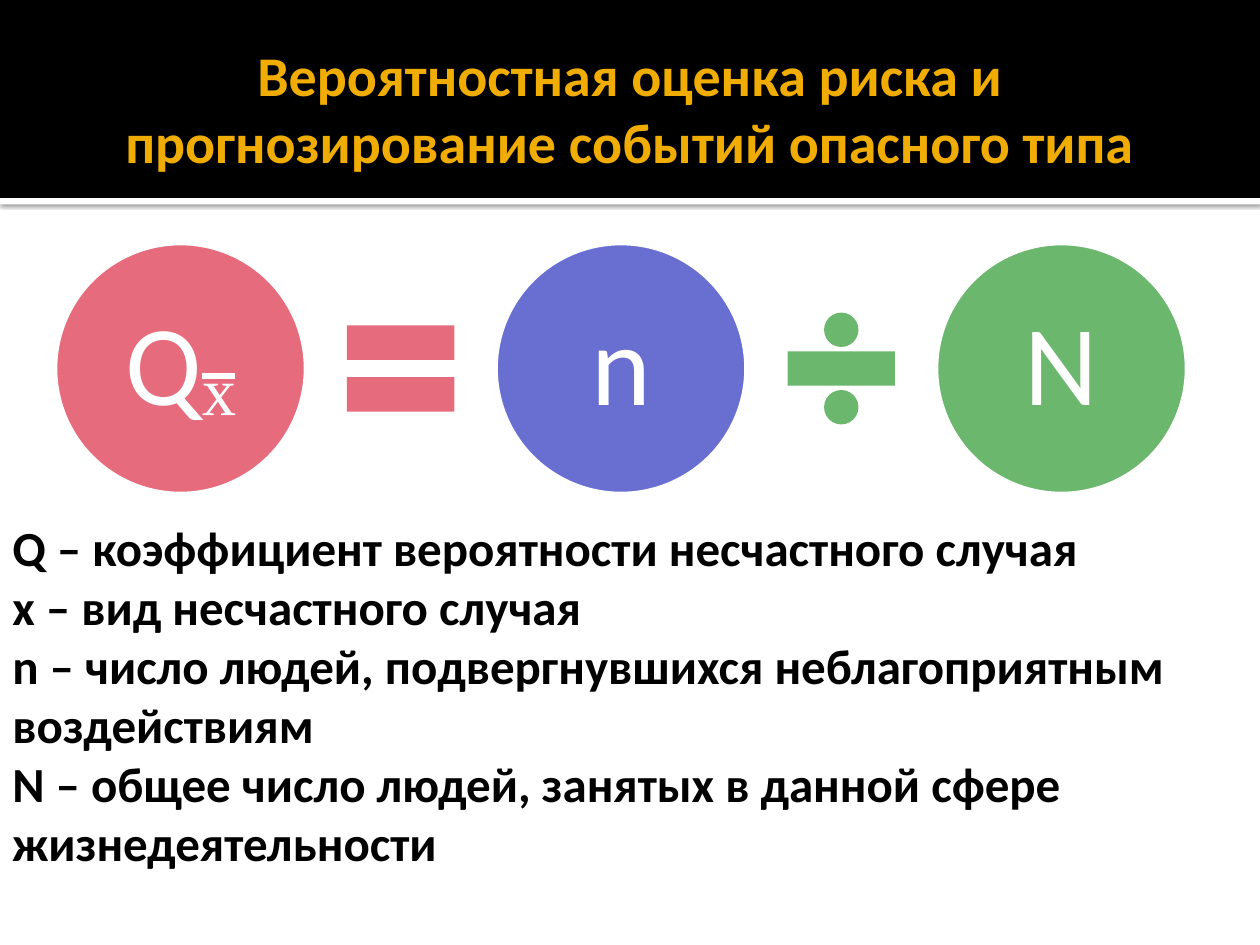
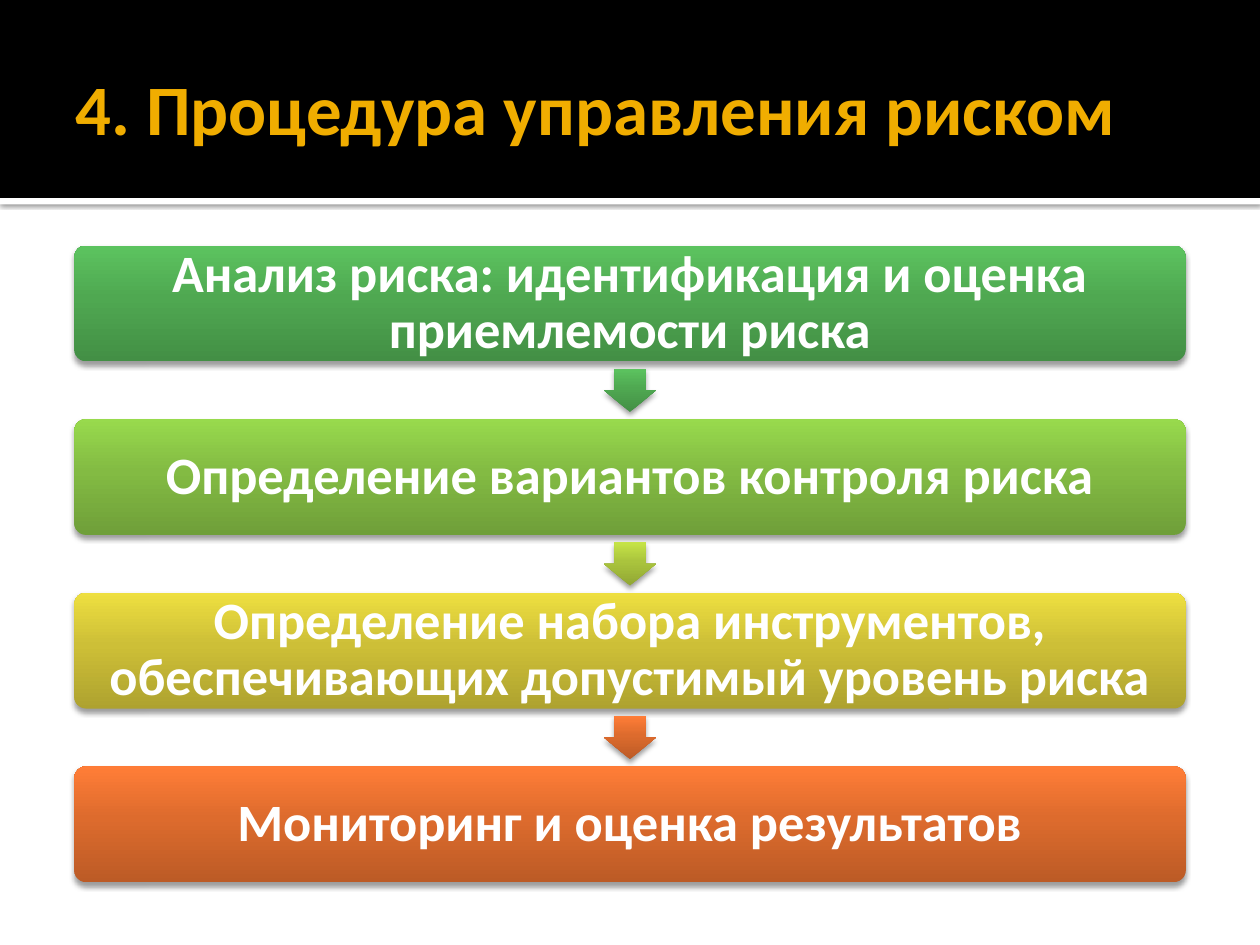
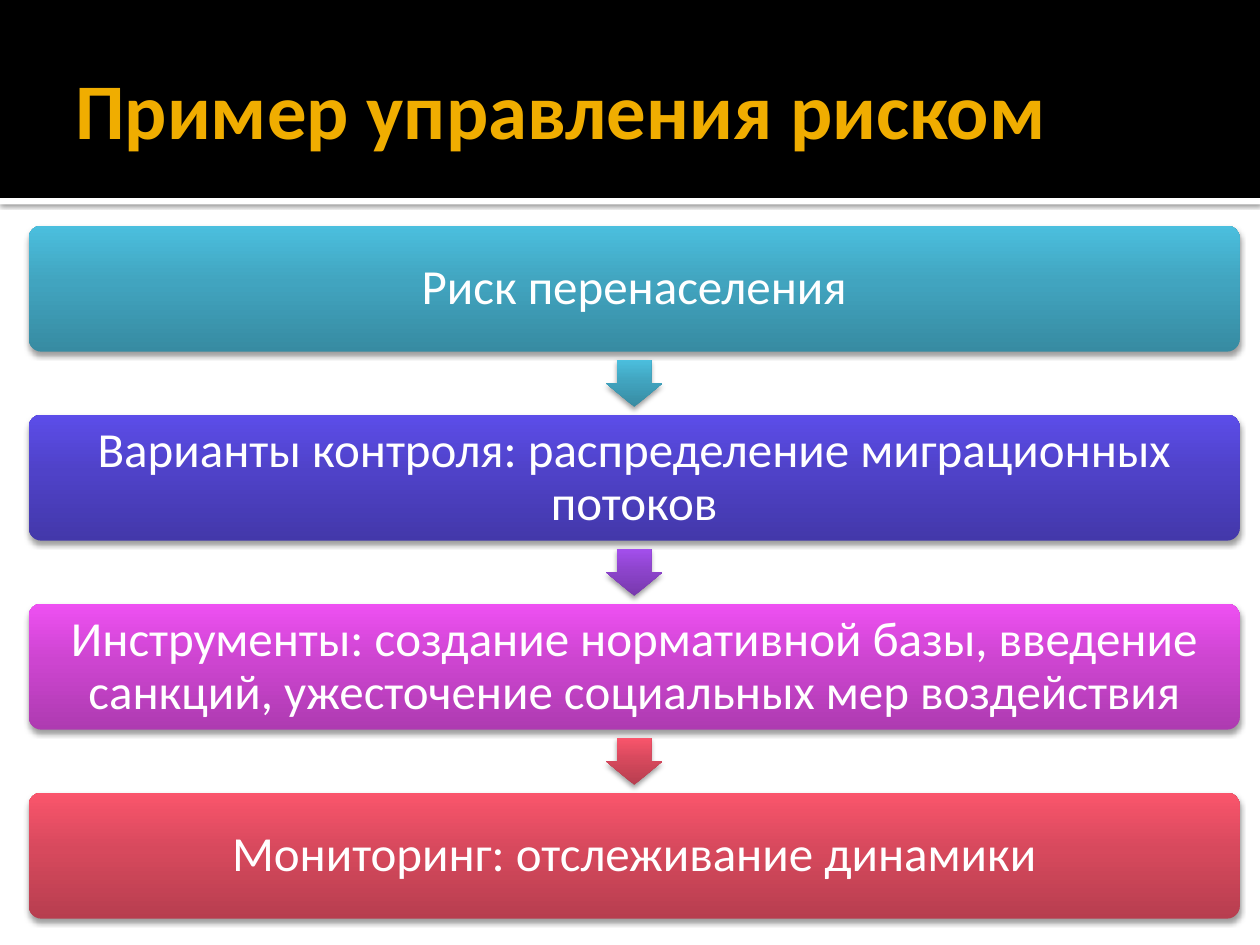
from dataclasses import dataclass

from lxml import etree
from pptx import Presentation
from pptx import util as u
from pptx.dml.color import RGBColor
from pptx.enum import shapes, text
from pptx.oxml.ns import qn
from pptx.shapes.autoshape import Shape
from pptx.slide import Slide
from pptx.text.text import TextFrame, _Run

WIDTH, HEIGHT = 25.4, 19.05
FONT = "Calibri"
BLACK, WHITE, GOLD = "000000", "FFFFFF", "F0AD00"
ROSE, INDIGO, LEAF = "E66C7D", "696FD1", "6BB76D"

# Gradients run from the bottom edge to the top edge.
Shades = tuple[str, str, str]
STOPS = (0, 55, 100)
GREEN = ("438F45", "4FA851", "5CC35F")
GRASS = ("6F9F39", "83BB43", "98DA4D")
LIME = ("91A734", "AAC43D", "C6E447")
YELLOW = ("AEA22F", "CDBF37", "EEDF40")
ORANGE = ("BC5B26", "DD6B2D", "FF7D37")
TEAL = ("378BA2", "41A4BF", "4BBFDE")
BLUE = ("4338AA", "4F42C8", "5C4DE9")
VIOLET = ("7839AD", "8D44CC", "A44FED")
MAGENTA = ("AE3BB1", "CD45D0", "EE50F2")
RED = ("B73E4F", "D7495D", "FA556C")


@dataclass(frozen=True)
class Shadow:
    alpha: int
    blur: float
    distance: float


STRIP_SHADOW = Shadow(60, 2.5, 0.8)
STEP_SHADOW = Shadow(38, 3.1, 2)


@dataclass(frozen=True)
class Step:
    label: str
    shades: Shades
    arrow_shades: Shades | None = None


@dataclass(frozen=True)
class Process:
    """A column of steps; pitch is the distance between step tops, in cm."""
    left: float
    top: float
    width: float
    pitch: float
    size: float
    bold: bool
    steps: tuple[Step, ...]


@dataclass(frozen=True)
class Term:
    symbol: str
    color: str


DEFINITIONS = (
    "Q – коэффициент вероятности несчастного случая",
    "x – вид несчастного случая",
    "n – число людей, подвергнувшихся неблагоприятным воздействиям",
    "N – общее число людей, занятых в данной сфере жизнедеятельности",
)
TERMS = (Term("Q", ROSE), Term("n", INDIGO), Term("N", LEAF))
OPERATORS = (
    (shapes.MSO_SHAPE.MATH_EQUAL, ROSE),
    (shapes.MSO_SHAPE.MATH_DIVIDE, LEAF),
)
PROCEDURE = Process(1.5, 4.95, 22.4, 3.5, 30, True, (
    Step("Анализ риска: идентификация и оценка приемлемости риска", GREEN, GREEN),
    Step("Определение вариантов контроля риска", GRASS, LIME),
    Step("Определение набора инструментов, обеспечивающих допустимый уровень риска",
         YELLOW, ORANGE),
    Step("Мониторинг и оценка результатов", ORANGE),
))
EXAMPLE = Process(0.58, 4.55, 24.41, 3.81, 28, False, (
    Step("Риск перенаселения", TEAL, TEAL),
    Step("Варианты контроля: распределение миграционных потоков", BLUE, VIOLET),
    Step("Инструменты: создание нормативной базы, введение санкций, "
         "ужесточение социальных мер воздействия", MAGENTA, RED),
    Step("Мониторинг: отслеживание динамики", RED),
))


def rgb(color: str) -> RGBColor:
    return RGBColor.from_string(color)


def write(frame: TextFrame, *lines: str, size: float, color: str, bold: bool = False,
          font: str = FONT, centered: bool = False, spacing: float = 1.0,
          anchor: text.MSO_ANCHOR = text.MSO_ANCHOR.MIDDLE, strike: bool = False,
          margins: tuple[float, float] = (0.25, 0.13), extend: bool = False) -> None:
    """Write one paragraph per line, or with extend add to the last paragraph."""
    frame.word_wrap = True
    frame.vertical_anchor = anchor
    frame.margin_left = frame.margin_right = u.Cm(margins[0])
    frame.margin_top = frame.margin_bottom = u.Cm(margins[1])
    for index, line in enumerate(lines):
        paragraph = frame.add_paragraph() if index else frame.paragraphs[-1]
        if not extend:
            paragraph.alignment = text.PP_ALIGN.CENTER if centered else text.PP_ALIGN.LEFT
            paragraph.line_spacing = spacing
        run: _Run = paragraph.add_run()
        run.text = line
        run.font.name = font
        run.font.size = u.Pt(size)
        run.font.bold = bold
        run.font.color.rgb = rgb(color)
        if strike:
            run._r.get_or_add_rPr().set("strike", "sngStrike")


def cast_shadow(shape: Shape, shadow: Shadow) -> None:
    effects = shape._element.spPr.find(qn("a:effectLst"))
    outer = etree.SubElement(
        effects, qn("a:outerShdw"), blurRad=str(u.Pt(shadow.blur)),
        dist=str(u.Pt(shadow.distance)), dir="5400000", rotWithShape="0")
    tint = etree.SubElement(outer, qn("a:srgbClr"), val=BLACK)
    etree.SubElement(tint, qn("a:alpha"), val=str(shadow.alpha * 1000))


def fill_gradient(shape: Shape, shades: Shades) -> None:
    shape.fill.gradient()
    shape.fill.gradient_angle = 90
    stops = shape._element.spPr.find(".//" + qn("a:gsLst"))
    stops.clear()
    for position, shade in zip(STOPS, shades):
        stop = etree.SubElement(stops, qn("a:gs"), pos=str(position * 1000))
        etree.SubElement(stop, qn("a:srgbClr"), val=shade)


def add_figure(slide: Slide, kind: shapes.MSO_SHAPE, left: float, top: float,
               width: float, height: float, fill: str | Shades,
               shadow: Shadow | None = None) -> Shape:
    figure = slide.shapes.add_shape(kind, u.Cm(left), u.Cm(top), u.Cm(width), u.Cm(height))
    figure.line.fill.background()
    figure.shadow.inherit = False
    if isinstance(fill, str):
        figure.fill.solid()
        figure.fill.fore_color.rgb = rgb(fill)
    else:
        fill_gradient(figure, fill)
    if shadow:
        cast_shadow(figure, shadow)
    return figure


def add_text_area(slide: Slide, left: float, top: float, width: float,
                  height: float) -> TextFrame:
    return slide.shapes.add_textbox(
        u.Cm(left), u.Cm(top), u.Cm(width), u.Cm(height)).text_frame


def add_titled_slide(deck: Presentation, title: str, size: float,
                     centered: bool = False) -> Slide:
    slide = deck.slides.add_slide(deck.slide_layouts[6])
    band_height = 3.99
    rectangle = shapes.MSO_SHAPE.RECTANGLE
    add_figure(slide, rectangle, 0, band_height, WIDTH, 0.13, WHITE, STRIP_SHADOW)
    add_figure(slide, rectangle, 0, 0, WIDTH, band_height, BLACK)
    write(add_text_area(slide, 1.27, 0.43, 22.86, 3.48), title,
          size=size, color=GOLD, bold=True, centered=centered)
    return slide


def add_formula(slide: Slide) -> None:
    left, top, diameter, pitch, operator_size = 1.09, 4.88, 5.1, 8.88, 2.95
    symbol_format = dict(size=65, color=WHITE, centered=True, spacing=0.9, margins=(0.1, 0.1))
    for index, term in enumerate(TERMS):
        circle = add_figure(slide, shapes.MSO_SHAPE.OVAL, left + index * pitch, top,
                            diameter, diameter, term.color)
        circle.line.color.rgb = rgb(WHITE)
        circle.line.width = u.Pt(3.78)
        write(circle.text_frame, term.symbol, **symbol_format)
        if term.symbol == "Q":
            write(circle.text_frame, "ₓ", font="Times New Roman", strike=True,
                  extend=True, **symbol_format)
    for index, (operator, color) in enumerate(OPERATORS):
        middle = left + (diameter + pitch) / 2 + index * pitch
        add_figure(slide, operator, middle - operator_size / 2,
                   top + (diameter - operator_size) / 2, operator_size, operator_size, color)


def add_process(slide: Slide, process: Process) -> None:
    step_height = process.pitch * 2 / 3
    gap = process.pitch - step_height
    arrow_width, arrow_height = process.pitch * 0.3, gap * 0.75
    for index, step in enumerate(process.steps):
        top = process.top + index * process.pitch
        box = add_figure(slide, shapes.MSO_SHAPE.ROUNDED_RECTANGLE, process.left, top,
                         process.width, step_height, step.shades, STEP_SHADOW)
        box.adjustments[0] = 0.1
        write(box.text_frame, step.label, size=process.size, color=WHITE,
              bold=process.bold, centered=True, spacing=0.9, margins=(0.3, 0))
        if step.arrow_shades:
            arrow = add_figure(slide, shapes.MSO_SHAPE.DOWN_ARROW,
                               process.left + (process.width - arrow_width) / 2,
                               top + step_height + (gap - arrow_height) / 2,
                               arrow_width, arrow_height, step.arrow_shades, STEP_SHADOW)
            arrow.adjustments[0] = 0.6
            arrow.adjustments[1] = 0.5


def main() -> None:
    deck = Presentation()
    deck.slide_width, deck.slide_height = u.Cm(WIDTH), u.Cm(HEIGHT)

    assessment = add_titled_slide(
        deck, "Вероятностная оценка риска и прогнозирование событий опасного типа",
        32, centered=True)
    add_formula(assessment)
    write(add_text_area(assessment, 0, 10.31, WIDTH, 8.2), *DEFINITIONS,
          size=28, color=BLACK, bold=True, anchor=text.MSO_ANCHOR.TOP)

    add_process(add_titled_slide(deck, "4. Процедура управления риском", 40.5), PROCEDURE)
    add_process(add_titled_slide(deck, "Пример управления риском", 45), EXAMPLE)
    deck.save("out.pptx")


if __name__ == "__main__":
    main()
